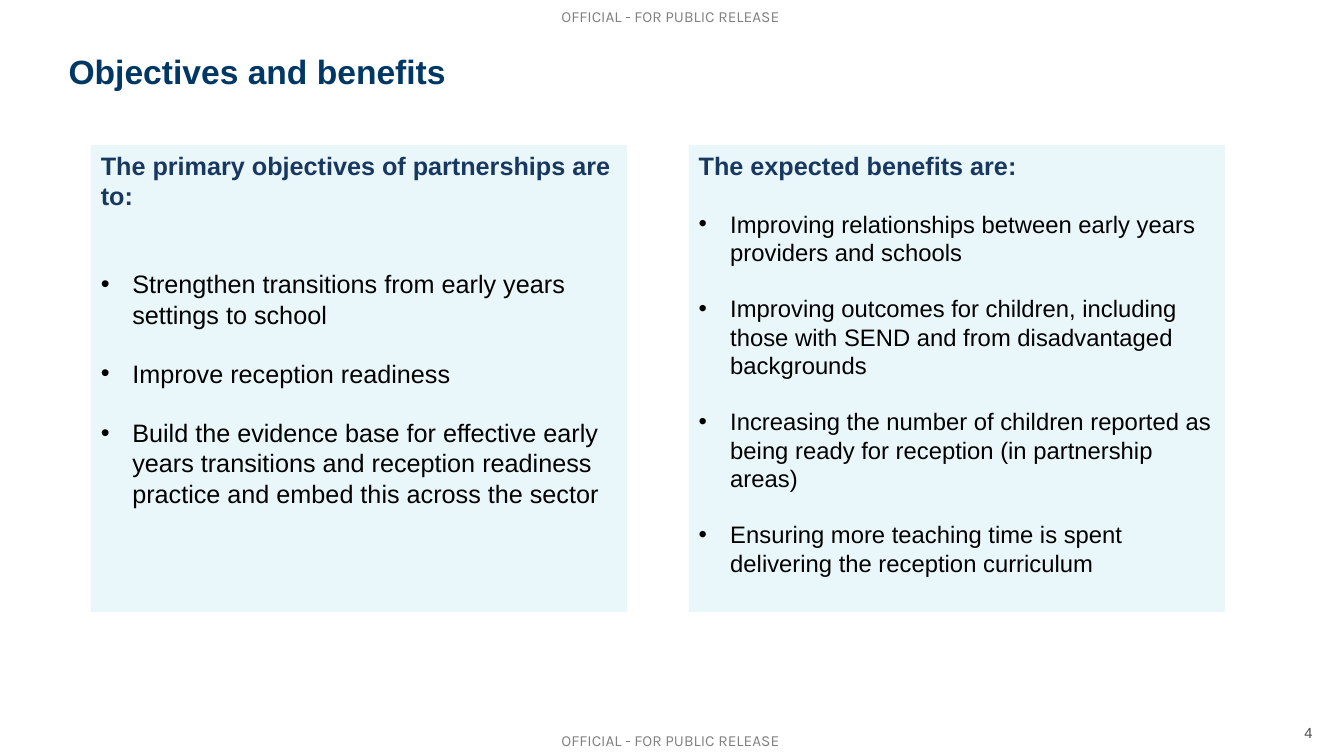
from dataclasses import dataclass

from lxml import etree
from pptx import Presentation
from pptx.dml.color import RGBColor
from pptx.enum.text import MSO_ANCHOR, MSO_AUTO_SIZE, PP_ALIGN
from pptx.oxml.ns import qn
from pptx.util import Pt

LEFT, RIGHT = PP_ALIGN.LEFT, PP_ALIGN.RIGHT
TOP, BOTTOM = MSO_ANCHOR.TOP, MSO_ANCHOR.BOTTOM
NO_AUTOFIT = MSO_AUTO_SIZE.NONE

COLORS = {
    "title": "003764",
    "heading": "183860",
    "body": "000000",
    "marking": "000000",
    "number": "4D4D4D",
    "panel": "D5F1F7",
}
TWO_CONTENT_LAYOUT = 3
BULLET_INDENT = 22.5
LINE_HEIGHT = 1.15  # height of one Arial line relative to its size


@dataclass
class Area:
    left: float
    top: float
    width: float
    height: float


@dataclass
class Style:
    size: float
    color: str
    bold: bool = False
    font: str = "Arial"


@dataclass
class Panel:
    left: float
    heading: str
    bullets: list[str]
    bullet_size: float
    heading_gap: float


PANELS = [
    Panel(64.8, "The primary objectives of partnerships are to:", [
        "Strengthen transitions from early years settings to school",
        "Improve reception readiness",
        "Build the evidence base for effective early years transitions "
        "and reception readiness practice and embed this across the sector",
    ], 18, 2 * 18 * LINE_HEIGHT),
    Panel(491.9, "The expected benefits are:", [
        "Improving relationships between early years providers and schools",
        "Improving outcomes for children, including those with SEND "
        "and from disadvantaged backgrounds",
        "Increasing the number of children reported as being ready for "
        "reception (in partnership areas)",
        "Ensuring more teaching time is spent delivering the reception curriculum",
    ], 17, 18 * LINE_HEIGHT),
]


def place(box, area: Area) -> None:
    box.left, box.top = Pt(area.left), Pt(area.top)
    box.width, box.height = Pt(area.width), Pt(area.height)


def set_frame(box, inset_x: float, inset_y: float, anchor=TOP):
    frame = box.text_frame
    frame.word_wrap = True
    frame.auto_size = NO_AUTOFIT
    frame.vertical_anchor = anchor
    frame.margin_left = frame.margin_right = Pt(inset_x)
    frame.margin_top = frame.margin_bottom = Pt(inset_y)
    return frame


def add_span(para, text: str, style: Style, align=LEFT, before: float = 0) -> None:
    para.alignment = align
    para.space_before = Pt(before)
    span = para.add_run()
    span.text = text
    span.font.name = style.font
    span.font.size = Pt(style.size)
    span.font.bold = style.bold
    span.font.color.rgb = RGBColor.from_string(COLORS[style.color])


def set_bullet(para, bulleted: bool) -> None:
    indent = Pt(BULLET_INDENT) if bulleted else 0
    props = para._p.get_or_add_pPr()
    props.set("marL", str(indent))
    props.set("indent", str(-indent))
    if bulleted:
        etree.SubElement(props, qn("a:buFont")).set("typeface", "Arial")
        etree.SubElement(props, qn("a:buChar")).set("char", "•")
    else:
        etree.SubElement(props, qn("a:buNone"))


def make_half_transparent(box) -> None:
    for color in box.element.iter(qn("a:srgbClr")):
        etree.SubElement(color, qn("a:alpha")).set("val", "50000")


def fill_panel(box, panel: Panel) -> None:
    place(box, Area(panel.left, 103.7, 383, 333.4))
    box.fill.solid()
    box.fill.fore_color.rgb = RGBColor.from_string(COLORS["panel"])
    make_half_transparent(box)
    frame = set_frame(box, 7.2, 3.6)
    heading = frame.paragraphs[0]
    set_bullet(heading, False)
    add_span(heading, panel.heading, Style(18, "heading", bold=True))
    for index, text in enumerate(panel.bullets):
        para = frame.add_paragraph()
        set_bullet(para, True)
        gap = panel.bullet_size * LINE_HEIGHT if index else panel.heading_gap
        add_span(para, text, Style(panel.bullet_size, "body"), before=gap)


def add_label(page, area: Area, text: str, style: Style, inset_x: float = 0,
              inset_y: float = 0, align=LEFT, anchor=TOP):
    box = page.shapes.add_textbox(0, 0, 0, 0)
    place(box, area)
    frame = set_frame(box, inset_x, inset_y, anchor)
    add_span(frame.paragraphs[0], text, style, align)
    return box


def main() -> None:
    deck = Presentation()
    deck.slide_width, deck.slide_height = Pt(960), Pt(540)
    page = deck.slides.add_slide(deck.slide_layouts[TWO_CONTENT_LAYOUT])

    # Title
    title = page.shapes.title
    place(title, Area(49, 39.6, 862.6, 40.3))
    title_para = set_frame(title, 0, 0).paragraphs[0]
    title_para.line_spacing = 0.9
    add_span(title_para, "Objectives and benefits", Style(24, "title", bold=True))

    # Objectives and benefits panels
    for index, panel in enumerate(PANELS, start=1):
        fill_panel(page.placeholders[index], panel)

    # Security markings at the top and bottom edges
    for top in (5, 522):
        marking = add_label(page, Area(401, top, 160, 13),
                            "OFFICIAL - FOR PUBLIC RELEASE",
                            Style(11, "marking", font="Karla"))
        make_half_transparent(marking)

    # Page number
    add_label(page, Area(885.6, 504.7, 59, 28.8), "4", Style(10.5, "number"),
              7.2, 3.6, RIGHT, BOTTOM)

    deck.save("out.pptx")


if __name__ == "__main__":
    main()
